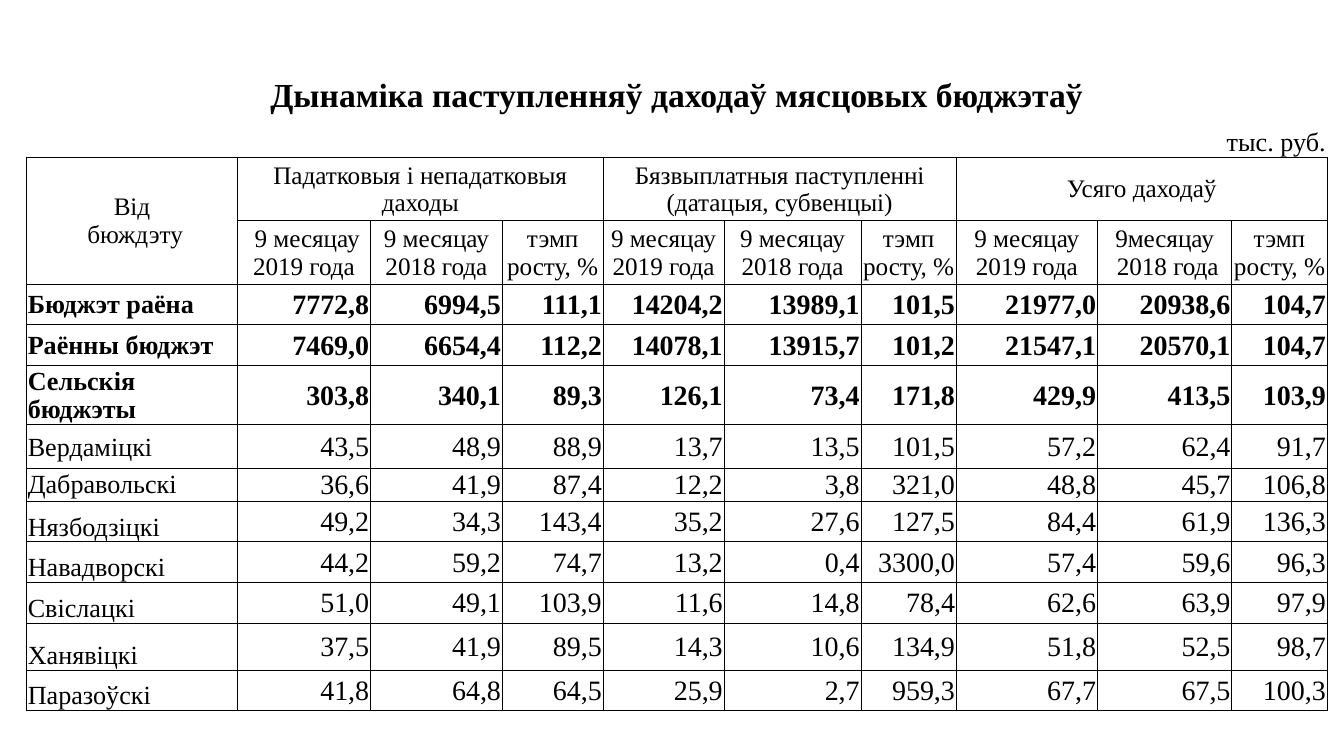
"""Build the slide with the table of local budget revenues."""
import pptx
import pptx.dml.color
import pptx.enum.text
import pptx.oxml
import pptx.oxml.ns
import pptx.util

TITLE = "Дынаміка паступленняў даходаў мясцовых бюджэтаў"
UNIT = "тыс. руб."
KIND = "Вiд\n бюждэту"
RATE = "тэмп\nросту, %"
GROUPS = [
    ("Падатковыя і непадатковыя даходы",
     " 9 месяцау 2019 года", "9 месяцау 2018 года", RATE),
    ("Бязвыплатныя паступленні (датацыя, субвенцыі)",
     "9 месяцау\n2019 года", "9 месяцау 2018 года", RATE),
    ("Усяго даходаў",
     "9 месяцау 2019 года", "9месяцау\n 2018 года", RATE),
]
DATA = [
    ("Бюджэт раёна", "7772,8 6994,5 111,1 14204,2 13989,1 101,5 21977,0 20938,6 104,7"),
    ("Раённы бюджэт", "7469,0 6654,4 112,2 14078,1 13915,7 101,2 21547,1 20570,1 104,7"),
    ("Сельскія бюджэты", "303,8 340,1 89,3 126,1 73,4 171,8 429,9 413,5 103,9"),
    ("Вердаміцкі", "43,5 48,9 88,9 13,7 13,5 101,5 57,2 62,4 91,7"),
    ("Дабравольскі", "36,6 41,9 87,4 12,2 3,8 321,0 48,8 45,7 106,8"),
    ("Нязбодзіцкі", "49,2 34,3 143,4 35,2 27,6 127,5 84,4 61,9 136,3"),
    ("Навадворскі", "44,2 59,2 74,7 13,2 0,4 3300,0 57,4 59,6 96,3"),
    ("Свіслацкі", "51,0 49,1 103,9 11,6 14,8 78,4 62,6 63,9 97,9"),
    ("Ханявіцкі", "37,5 41,9 89,5 14,3 10,6 134,9 51,8 52,5 98,7"),
    ("Паразоўскі", "41,8 64,8 64,5 25,9 2,7 959,3 67,7 67,5 100,3"),
]
COLORS = {"ink": "000000"}
FONT = "Times New Roman"
WIDTHS = [113, 71.3, 60.5, 10.1, 54, 64.8, 15.1, 58.3, 51.1, 75.6, 61.2, 10.8, 51.1]
HEIGHTS = [23, 23, 34, 34, 21.8, 21.8, 21.8, 23.7, 17.3, 21.8, 21.8, 21.8, 25.2, 21.6]
STARTS = [0, 1, 2, 4, 5, 6, 8, 9, 10, 12]
UNITROW = [0, 1, 3, 7, 9, 10, 11]
NOSTYLE = "{2D5ABB26-0587-4C30-8999-92F81FD0307C}"
HEAD, BODY = 2, 4
BOLD = 3
UPPER = 4

Pt = pptx.util.Pt
ALIGN = pptx.enum.text.PP_ALIGN
ANCHOR = pptx.enum.text.MSO_ANCHOR
INSETS = {"margin_left": Pt(0.7), "margin_right": Pt(0.7),
          "margin_top": Pt(0.7), "margin_bottom": Pt(0)}


def apply(item, form):
    for name, value in form.items():
        setattr(item, name, value)


def border(cell, sides):
    props = cell._tc.get_or_add_tcPr()
    for place, side in enumerate(sides):
        props.insert(place, pptx.oxml.parse_xml(
            f'<a:ln{side} {pptx.oxml.ns.nsdecls("a")} w="6350"><a:solidFill>'
            f'<a:srgbClr val="{COLORS["ink"]}"/></a:solidFill></a:ln{side}>'))


def write(cell, text, size, align, anchor=ANCHOR.MIDDLE, bold=False):
    cell.text = text
    cell.vertical_anchor = anchor
    for para in cell.text_frame.paragraphs:
        para.alignment = align
        for run in para.runs:
            apply(run.font, {"name": FONT, "size": Pt(size), "bold": bold})
            run.font.color.rgb = pptx.dml.color.RGBColor.from_string(COLORS["ink"])


def merge(table, row, starts):
    for first, after in zip(starts, starts[1:] + [len(WIDTHS)]):
        if after - first > 1:
            table.cell(row, first).merge(table.cell(row, after - 1))


def frame(slide):
    table = slide.shapes.add_table(
        len(HEIGHTS), len(WIDTHS), Pt(14.2), Pt(38.2),
        Pt(sum(WIDTHS)), Pt(sum(HEIGHTS))).table
    apply(table, {"first_row": False, "horz_banding": False})
    table._tbl.tblPr.find(pptx.oxml.ns.qn("a:tableStyleId")).text = NOSTYLE
    for col, width in zip(table.columns, WIDTHS):
        col.width = Pt(width)
    for num, (row, height) in enumerate(zip(table.rows, HEIGHTS)):
        row.height = Pt(height)
        for cell in row.cells:
            apply(cell, INSETS)
            cell.fill.background()
            border(cell, "LRTB" if num >= HEAD else "B" * num)
    return table


def fill(table):
    merge(table, 0, [0])
    write(table.cell(0, 0), TITLE, 18, ALIGN.CENTER, ANCHOR.BOTTOM, True)
    merge(table, 1, UNITROW)
    write(table.cell(1, UNITROW[-1]), UNIT, 14, ALIGN.RIGHT, ANCHOR.BOTTOM)

    table.cell(HEAD, 0).merge(table.cell(HEAD + 1, 0))
    write(table.cell(HEAD, 0), KIND, 13.5, ALIGN.CENTER)
    merge(table, HEAD, [0] + STARTS[1::3])
    merge(table, HEAD + 1, STARTS)
    for num, (group, *labels) in enumerate(GROUPS):
        cols = STARTS[1 + 3 * num:4 + 3 * num]
        write(table.cell(HEAD, cols[0]), group, 13.5, ALIGN.CENTER)
        for col, label in zip(cols, labels):
            write(table.cell(HEAD + 1, col), label, 13.5, ALIGN.CENTER)

    for num, (name, values) in enumerate(DATA):
        row, bold = BODY + num, num < BOLD
        merge(table, row, STARTS)
        anchor = ANCHOR.TOP if num == UPPER else ANCHOR.MIDDLE
        low = ANCHOR.BOTTOM if num > UPPER else anchor
        write(table.cell(row, 0), name, 14, ALIGN.LEFT, low, bold)
        for col, value in zip(STARTS[1:], values.split()):
            write(table.cell(row, col), value, 15, ALIGN.RIGHT, anchor, bold)


def main():
    deck = pptx.Presentation()
    apply(deck, {"slide_width": Pt(720), "slide_height": Pt(405)})
    slide = deck.slides.add_slide(deck.slide_layouts[6])
    fill(frame(slide))
    deck.save("out.pptx")


if __name__ == "__main__":
    main()
